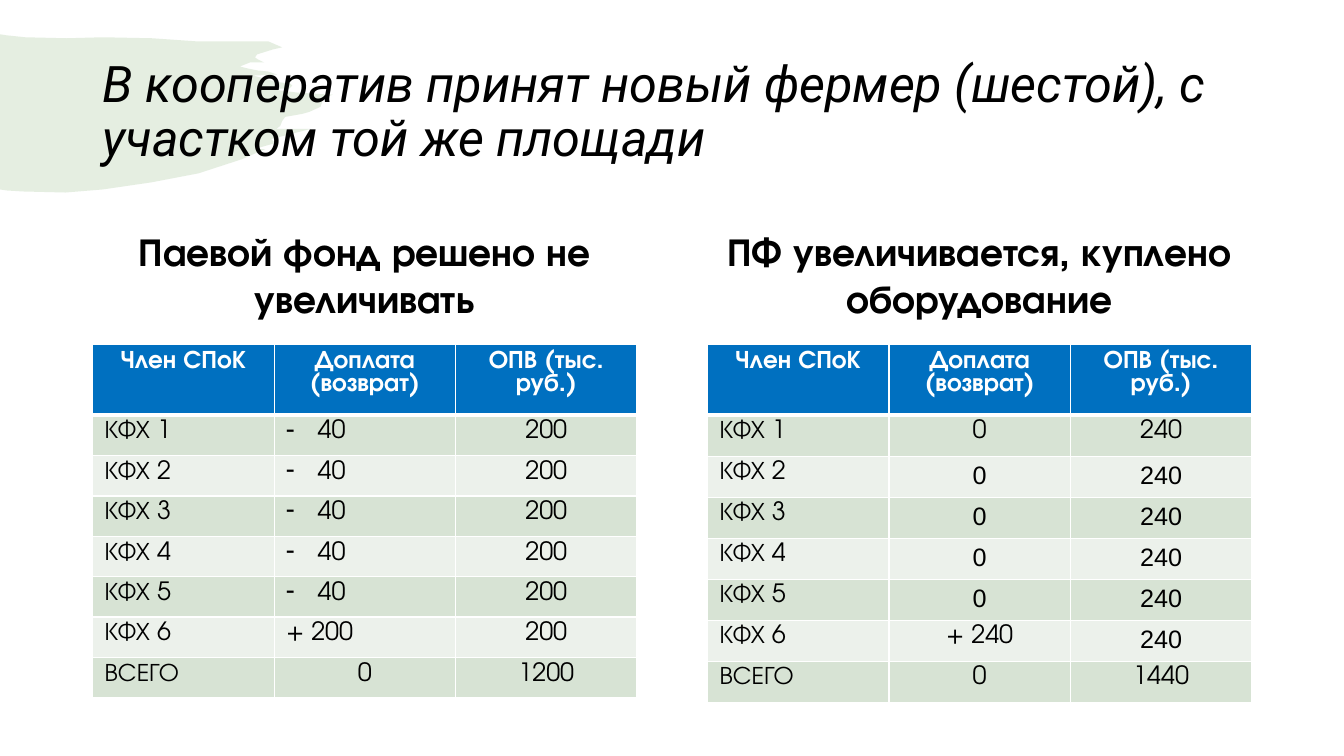
"""Build the slide comparing two ways of admitting a sixth farmer to a cooperative."""
from dataclasses import dataclass

from lxml import etree
from pptx import Presentation
from pptx import util as u
from pptx.dml.color import RGBColor
from pptx.enum import text
from pptx.oxml import ns


@dataclass(frozen=True)
class Theme:
    """Colours, fonts and type sizes in points."""
    ink: str = "000000"
    paper: str = "FFFFFF"
    header: str = "0070C0"
    bands: tuple[str, str] = ("D7E3D4", "ECF1EB")
    brush: str = "7DAC6C"
    brush_alpha: int = 20000
    title_font: str = "Roboto"
    main_font: str = "TeX Gyre Adventor"
    plain_font: str = "Arial"
    title_size: float = 36
    heading_size: float = 28
    table_size: float = 18


THEME = Theme()


@dataclass(frozen=True)
class Style:
    """The look of a paragraph."""
    font: str
    size: float
    colour: str = THEME.ink
    bold: bool = False
    italic: bool = False
    centred: bool = False


@dataclass(frozen=True)
class Entry:
    """The content of a table cell."""
    words: str
    centred: bool = True
    dashed: bool = False
    font: str = THEME.main_font


@dataclass(frozen=True)
class Option:
    """A heading with its table of payments."""
    left: float
    heading: str
    header_height: float
    row_height: float
    payments: list[Entry]
    shares: list[Entry]


HEADERS = ["Член СПоК", "Доплата (возврат)", "ОПВ (тыс. руб.)"]
MEMBERS = [f"КФХ {number}" for number in range(1, 7)] + ["ВСЕГО"]
COLUMN_WIDTH = 129.6
OPTION_WIDTH = COLUMN_WIDTH * len(HEADERS)
HEADING_TOP, HEADING_HEIGHT = 158.4, 74.9
TABLE_TOP = 246.2
BULLET_INDENT = 22.5
BRUSH_UNIT = 0.72
BRUSH_OUTLINE = [
    (0, 34), (6, 35), (25, 37), (66, 38), (102, 37), (151, 38), (194, 41), (248, 41),
    (266, 41), (280, 47), (271, 49), (255, 54), (253, 57), (256, 59), (262, 62),
    (248, 62), (238, 66), (246, 68), (256, 70), (266, 71), (275, 74), (251, 75),
    (263, 78), (273, 81), (280, 82), (288, 83), (290, 85), (287, 88), (284, 88),
    (263, 88), (296, 92), (330, 94), (321, 97), (318, 106), (307, 111), (300, 113),
    (283, 116), (280, 120), (278, 125), (274, 128), (308, 128), (269, 138), (273, 142),
    (252, 148), (263, 148), (240, 158), (197, 172), (150, 181), (102, 188), (65, 191),
    (23, 190), (7, 189), (0, 188),
]
OPTIONS = [
    Option(66.2, "Паевой фонд решено не увеличивать", 49, 28.1,
           [Entry("40", False, True)] * 5 + [Entry("+ 200", False), Entry("0")],
           [Entry("200")] * 6 + [Entry("1200")]),
    Option(505.4, "ПФ увеличивается, куплено оборудование", 50.4, 29.3,
           [Entry("0")] + [Entry("0", font=THEME.plain_font)] * 4
           + [Entry("+ 240"), Entry("0")],
           [Entry("240")] + [Entry("240", font=THEME.plain_font)] * 5 + [Entry("1440")]),
]


def format_paragraph(para, style: Style) -> None:
    """Apply a style to a paragraph and its runs."""
    para.alignment = text.PP_ALIGN.CENTER if style.centred else text.PP_ALIGN.LEFT
    for span in para.runs:
        span.font.name = style.font
        span.font.size = u.Pt(style.size)
        span.font.bold = style.bold
        span.font.italic = style.italic
        span.font.color.rgb = RGBColor.from_string(style.colour)


def add_brush(page) -> None:
    """Draw the translucent brush stroke behind the title."""
    builder = page.shapes.build_freeform(*BRUSH_OUTLINE[0], scale=u.Pt(BRUSH_UNIT))
    builder.add_line_segments(BRUSH_OUTLINE[1:], close=True)
    brush = builder.convert_to_shape()
    brush.shadow.inherit = False
    brush.line.fill.background()
    brush.fill.solid()
    brush.fill.fore_color.rgb = RGBColor.from_string(THEME.brush)
    colour = brush.fill._xPr.find(ns.qn("a:solidFill"))[0]
    etree.SubElement(colour, ns.qn("a:alpha"), val=str(THEME.brush_alpha))


def add_label(page, left: float, top: float, width: float, height: float,
              words: str, style: Style):
    """Add a vertically centred text box and return its paragraph."""
    box = page.shapes.add_textbox(u.Pt(left), u.Pt(top), u.Pt(width), u.Pt(height))
    box.text_frame.word_wrap = True
    box.text_frame.vertical_anchor = text.MSO_ANCHOR.MIDDLE
    box.text_frame.text = words
    para = box.text_frame.paragraphs[0]
    format_paragraph(para, style)
    return para


def add_borders(cell, bottom_width: float) -> None:
    """Give a cell white borders, placed ahead of its fill."""
    properties = cell._tc.get_or_add_tcPr()
    widths = {"lnL": 1, "lnR": 1, "lnT": 1, "lnB": bottom_width}
    for position, (side, width) in enumerate(widths.items()):
        line = etree.Element(ns.qn(f"a:{side}"), w=str(u.Pt(width)))
        fill = etree.SubElement(line, ns.qn("a:solidFill"))
        etree.SubElement(fill, ns.qn("a:srgbClr"), val=THEME.paper)
        properties.insert(position, line)


def fill_cell(cell, entry: Entry, fill: str, is_header: bool) -> None:
    """Write an entry into a cell and colour it."""
    cell.margin_left = cell.margin_right = u.Pt(8.64)
    cell.margin_top = cell.margin_bottom = u.Pt(3.6)
    cell.fill.solid()
    cell.fill.fore_color.rgb = RGBColor.from_string(fill)
    add_borders(cell, 3 if is_header else 1)
    cell.text_frame.text = entry.words
    para = cell.text_frame.paragraphs[0]
    colour = THEME.paper if is_header else THEME.ink
    format_paragraph(para, Style(entry.font, THEME.table_size, colour,
                                 bold=is_header, centred=entry.centred))
    if entry.dashed:
        properties = para._p.get_or_add_pPr()
        properties.set("marL", str(u.Pt(BULLET_INDENT)))
        properties.set("indent", str(-u.Pt(BULLET_INDENT)))
        etree.SubElement(properties, ns.qn("a:buChar"), char="-")


def add_option(page, option: Option) -> None:
    """Draw a heading and the table below it."""
    heading = add_label(page, option.left, HEADING_TOP, OPTION_WIDTH, HEADING_HEIGHT,
                        option.heading, Style(THEME.main_font, THEME.heading_size,
                                              bold=True, centred=True))
    heading.space_before = u.Pt(10)
    rows = [[Entry(words) for words in HEADERS]]
    rows += [[Entry(member, False), payment, share] for member, payment, share
             in zip(MEMBERS, option.payments, option.shares)]
    height = option.header_height + option.row_height * len(MEMBERS)
    table = page.shapes.add_table(len(rows), len(HEADERS), u.Pt(option.left),
                                  u.Pt(TABLE_TOP), u.Pt(OPTION_WIDTH), u.Pt(height)).table
    for column in table.columns:
        column.width = u.Pt(COLUMN_WIDTH)
    for index, entries in enumerate(rows):
        is_header = index == 0
        table.rows[index].height = u.Pt(
            option.header_height if is_header else option.row_height)
        fill = THEME.header if is_header else THEME.bands[(index - 1) % 2]
        for cell, entry in zip(table.rows[index].cells, entries):
            fill_cell(cell, entry, fill, is_header)


def main() -> None:
    """Build and save the deck."""
    deck = Presentation()
    deck.slide_width, deck.slide_height = u.Pt(960), u.Pt(540)
    page = deck.slides.add_slide(deck.slide_layouts[6])
    add_brush(page)
    title = add_label(page, 66.2, 28.8, 828, 104.4,
                      "В кооператив принят новый фермер (шестой), с участком той же площади",
                      Style(THEME.title_font, THEME.title_size, italic=True))
    title.line_spacing = 0.9
    for option in OPTIONS:
        add_option(page, option)
    deck.save("out.pptx")


if __name__ == "__main__":
    main()
